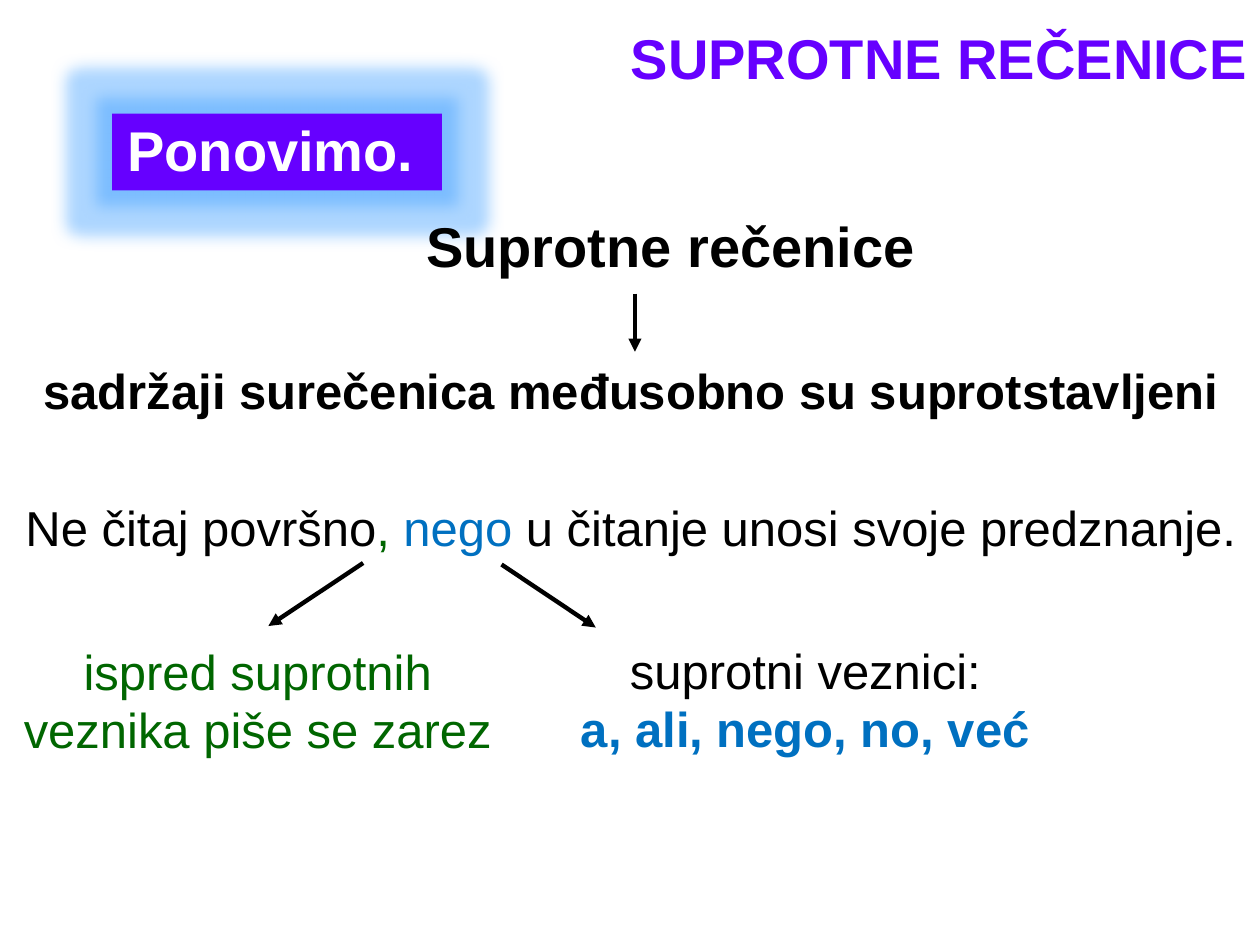
import dataclasses

import lxml.etree
import pptx
import pptx.dml.color
import pptx.enum.shapes
import pptx.enum.text
import pptx.oxml.ns
import pptx.util

Cm = pptx.util.Cm
Pt = pptx.util.Pt
Align = pptx.enum.text.PP_ALIGN
Anchor = pptx.enum.text.MSO_ANCHOR
qn = pptx.oxml.ns.qn


@dataclasses.dataclass(frozen=True)
class Theme:
    font: str = "Arial"
    heading: int = 32
    body: int = 28
    line: float = 2.5
    black: str = "000000"
    white: str = "FFFFFF"
    violet: str = "6600FF"
    green: str = "006600"
    blue: str = "0070C0"
    glow: str = "3399FF"


THEME = Theme()


def rgb(value):
    return pptx.dml.color.RGBColor.from_string(value)


def add_text(page, position, lines, size=THEME.body, bold=False,
             align=Align.CENTER, anchor=Anchor.TOP):
    """Add a text box; each line is a list of (text, colour) spans."""
    box = page.shapes.add_textbox(*map(Cm, position))
    frame = box.text_frame
    frame.word_wrap = True
    frame.vertical_anchor = anchor
    for number, spans in enumerate(lines):
        para = frame.paragraphs[0] if number == 0 else frame.add_paragraph()
        para.alignment = align
        para.font.name = THEME.font
        para.font.size = Pt(size)
        para.font.bold = bold
        for text, colour in spans:
            span = para.add_run()
            span.text = text
            span.font.color.rgb = rgb(colour)
    return frame


def add_glowing_panel(page, position, radius):
    panel = page.shapes.add_shape(
        pptx.enum.shapes.MSO_SHAPE.RECTANGLE, *map(Cm, position))
    panel.shadow.inherit = False
    panel.fill.solid()
    panel.fill.fore_color.rgb = rgb(THEME.violet)
    panel.line.fill.background()
    effects = panel.element.spPr.find(qn("a:effectLst"))
    glow = lxml.etree.SubElement(effects, qn("a:glow"), rad=str(Pt(radius)))
    colour = lxml.etree.SubElement(glow, qn("a:srgbClr"), val=THEME.glow)
    lxml.etree.SubElement(colour, qn("a:alpha"), val="40000")


def add_arrow(page, start, end):
    arrow = page.shapes.add_connector(
        pptx.enum.shapes.MSO_CONNECTOR.STRAIGHT, *map(Cm, start + end))
    arrow.line.color.rgb = rgb(THEME.black)
    arrow.line.width = Pt(THEME.line)
    lxml.etree.SubElement(arrow.line._get_or_add_ln(), qn("a:tailEnd"), type="triangle")
    lxml.etree.SubElement(arrow.element.spPr, qn("a:effectLst"))


def add_headings(page):
    add_glowing_panel(page, (2.26, 2.29, 6.65, 1.55), radius=18)
    label = add_text(page, (2.39, 1.65, 9.09, 2.13), [[("Ponovimo.", THEME.white)]],
                     THEME.heading, True, Align.LEFT, Anchor.BOTTOM)
    label.margin_left = label.margin_right = Cm(0.18)
    label.margin_top = label.margin_bottom = Cm(0.1)
    label.paragraphs[0].space_before = Pt(10)

    title = add_text(page, (3.35, 0.05, 22.05, 1.93),
                     [[("SUPROTNE REČENICE", THEME.violet)]],
                     THEME.heading, True, Align.RIGHT, Anchor.BOTTOM)
    title.paragraphs[0].line_spacing = 0.9

    add_text(page, (0.84, 4.14, 25.37, 1.63),
             [[("Suprotne rečenice", THEME.black)]], THEME.heading, True)


def add_explanation(page):
    add_text(page, (0.03, 7.14, 25.37, 1.93),
             [[("sadržaji surečenica međusobno su suprotstavljeni", THEME.black)]],
             bold=True)
    add_text(page, (0.03, 9.91, 25.37, 1.93), [[
        ("Ne čitaj površno", THEME.black),
        (", ", THEME.green),
        ("nego", THEME.blue),
        (" u čitanje unosi svoje predznanje.", THEME.black),
    ]])
    add_text(page, (-0.23, 12.8, 10.85, 1.93),
             [[("ispred suprotnih veznika piše se zarez", THEME.green)]])
    conjunctions = add_text(page, (9.4, 12.78, 13.67, 1.93), [
        [("suprotni veznici:", THEME.black)],
        [("a, ali, nego, no, već", THEME.blue)],
    ])
    conjunctions.paragraphs[1].font.bold = True


def main():
    deck = pptx.Presentation()
    deck.slide_width, deck.slide_height = Cm(25.4), Cm(19.05)
    page = deck.slides.add_slide(deck.slide_layouts[6])
    add_headings(page)
    add_explanation(page)
    for start, end in (
        ((12.8, 5.92), (12.8, 7.09)),
        ((7.32, 11.35), (5.41, 12.62)),
        ((10.11, 11.38), (12.01, 12.65)),
    ):
        add_arrow(page, start, end)
    deck.save("out.pptx")


if __name__ == "__main__":
    main()
